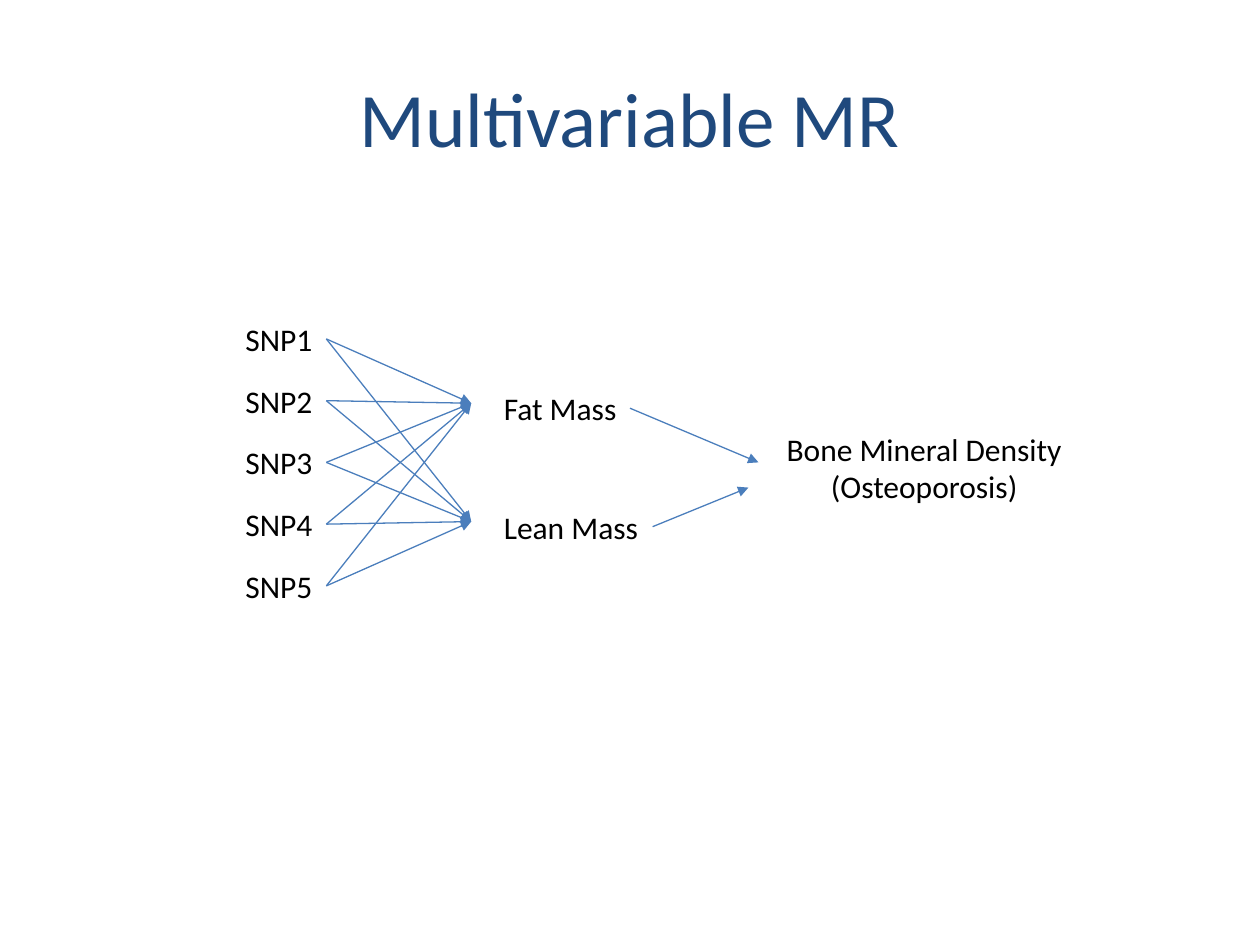
from dataclasses import dataclass

from lxml.etree import SubElement
from pptx import Presentation
from pptx.dml.color import RGBColor
from pptx.enum.shapes import MSO_CONNECTOR
from pptx.enum.text import MSO_ANCHOR, MSO_AUTO_SIZE, PP_ALIGN
from pptx.oxml.ns import qn
from pptx.util import Inches, Pt


@dataclass(frozen=True)
class Theme:
    font: str = "Calibri"
    title_color: RGBColor = RGBColor(0x1F, 0x49, 0x7D)
    text_color: RGBColor = RGBColor(0, 0, 0)
    arrow_color: RGBColor = RGBColor(0x4B, 0x7E, 0xBC)
    title_size: Pt = Pt(44)
    label_size: Pt = Pt(18)
    arrow_width: Pt = Pt(0.75)


theme = Theme()

prs = Presentation()
prs.slide_width, prs.slide_height = Inches(10), Inches(7.5)
slide = prs.slides.add_slide(prs.slide_layouts[5])

# Columns of the diagram, and the rows of its first column
SNP_COLUMN, EXPOSURE_COLUMN, OUTCOME_COLUMN = 1.85, 3.9, 6.13
EXPOSURE_ENTRY = 3.74
TOP_ROW, ROW_STEP = 2.49, 0.49
LABEL_HEIGHT = 0.4
RIGHT_SIDE = 3


def add_label(lines, left, top, width, height=LABEL_HEIGHT, align=PP_ALIGN.LEFT):
    label = slide.shapes.add_textbox(
        Inches(left), Inches(top), Inches(width), Inches(height))
    frame = label.text_frame
    frame.word_wrap = False
    frame.auto_size = MSO_AUTO_SIZE.SHAPE_TO_FIT_TEXT
    frame.text = "\n".join(lines)
    for paragraph in frame.paragraphs:
        paragraph.alignment = align
        paragraph.font.name = theme.font
        paragraph.font.size = theme.label_size
        paragraph.font.color.rgb = theme.text_color
    return label


def add_arrow(source, end_x, end_y):
    """Draw an arrow from the right side of a label to a point in inches."""
    arrow = slide.shapes.add_connector(
        MSO_CONNECTOR.STRAIGHT, source.left + source.width,
        source.top + source.height // 2, Inches(end_x), Inches(end_y))
    arrow.begin_connect(source, RIGHT_SIDE)
    arrow.line.color.rgb = theme.arrow_color
    arrow.line.width = theme.arrow_width
    SubElement(arrow.line._get_or_add_ln(), qn("a:tailEnd"), type="triangle")
    SubElement(arrow._element.spPr, qn("a:effectLst"))


title = slide.shapes.title
title.left, title.top = Inches(0.5), Inches(0.3)
title.width, title.height = Inches(9), Inches(1.25)
title.text_frame.text = "Multivariable MR"
title.text_frame.vertical_anchor = MSO_ANCHOR.MIDDLE
heading = title.text_frame.paragraphs[0]
heading.alignment = PP_ALIGN.CENTER
heading.font.name = theme.font
heading.font.size = theme.title_size
heading.font.color.rgb = theme.title_color

snps = [add_label([f"SNP{row + 1}"], SNP_COLUMN, TOP_ROW + row * ROW_STEP, 0.74)
        for row in range(5)]
fat_mass = add_label(["Fat Mass"], EXPOSURE_COLUMN, 3.04, 1.1)
lean_mass = add_label(["Lean Mass"], EXPOSURE_COLUMN, 3.98, 1.28)
add_label(["Bone Mineral Density", "(Osteoporosis)"],
          OUTCOME_COLUMN, 3.36, 2.41, 0.71, PP_ALIGN.CENTER)

# Every SNP acts on both exposures
for snp in snps:
    for entry_y in (3.2, 4.14):
        add_arrow(snp, EXPOSURE_ENTRY, entry_y)

# Both exposures act on the outcome
add_arrow(fat_mass, 6.02, 3.67)
add_arrow(lean_mass, 5.94, 3.87)

prs.save("out.pptx")
